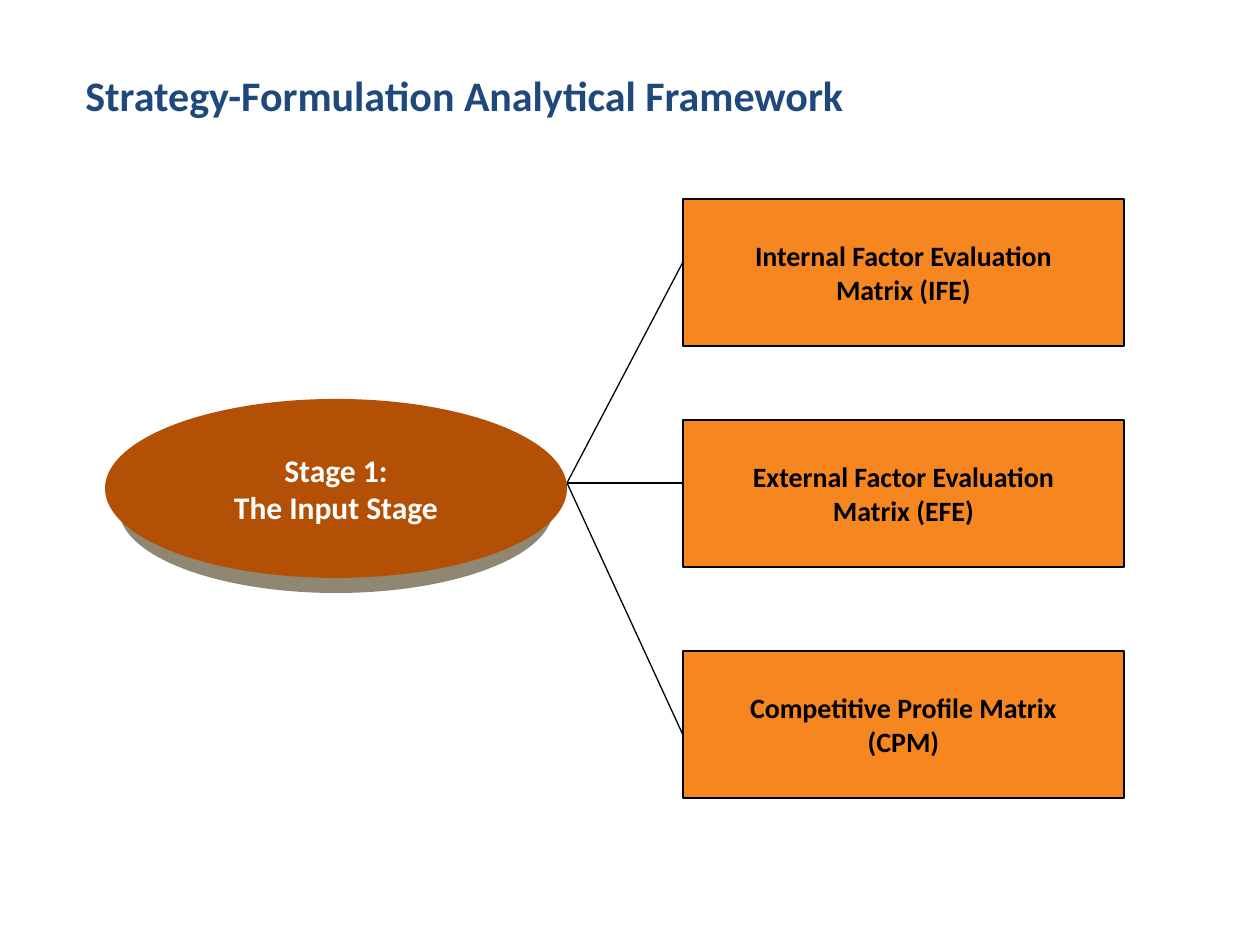
from pptx import Presentation
from pptx.dml.color import RGBColor
from pptx.enum.shapes import MSO_CONNECTOR, MSO_SHAPE
from pptx.enum.text import MSO_ANCHOR, PP_ALIGN
from pptx.oxml.ns import qn
from pptx.util import Pt
from lxml import etree

RECT, OVAL = MSO_SHAPE.RECTANGLE, MSO_SHAPE.OVAL
LINE = MSO_CONNECTOR.STRAIGHT
MID, TOP = MSO_ANCHOR.MIDDLE, MSO_ANCHOR.TOP
LEFT, MIDDLE = PP_ALIGN.LEFT, PP_ALIGN.CENTER
NAVY = RGBColor(0x1F, 0x49, 0x7D)
ORANGE = RGBColor(0xF6, 0x86, 0x1F)
RUST = RGBColor(0xB4, 0x50, 0x05)
TAUPE = RGBColor(0x8F, 0x87, 0x72)
BLACK = RGBColor(0, 0, 0)
WHITE = RGBColor(0xFF, 0xFF, 0xFF)


def px(*nums):
    return [round(num * 914400 / 126) for num in nums]


def write(frame, text, size=16, color=BLACK, align=MIDDLE, anchor=MID, wrap=False, face="Calibri"):
    frame.word_wrap = wrap
    frame.vertical_anchor = anchor
    para = frame.paragraphs[0]
    para.text = text
    para.alignment = align
    for run in para.runs:
        font = run.font
        font.name, font.size, font.bold = face, Pt(size), True
        font.color.rgb = color


class Deck:
    """Holds the line style and the current slide."""

    def __init__(self, slide, width=0.75, ink=BLACK):
        self.slide, self.width, self.ink = slide, width, ink

    def title(self, text, *area):
        box = self.slide.shapes.add_textbox(*px(*area))
        write(box.text_frame, text, size=24, color=NAVY, align=LEFT, anchor=TOP, wrap=True)

    def shape(self, kind, fill, *area, edge=False, text="", **style):
        item = self.slide.shapes.add_shape(kind, *px(*area))
        item.shadow.inherit = False
        item.fill.solid()
        item.fill.fore_color.rgb = fill
        if edge:
            self.stroke(item.line)
        else:
            item.line.fill.background()
        if text:
            write(item.text_frame, text, **style)

    def link(self, *ends):
        item = self.slide.shapes.add_connector(LINE, *px(*ends))
        self.stroke(item.line)
        etree.SubElement(item.element.spPr, qn("a:effectLst"))

    def stroke(self, line):
        line.color.rgb = self.ink
        line.width = Pt(self.width)


def main():
    show = Presentation()
    show.slide_width, show.slide_height = px(1260, 945)
    deck = Deck(show.slides.add_slide(show.slide_layouts[6]))
    deck.title("Strategy-Formulation Analytical Framework", 73, 63, 1187, 64)
    tools = [
        ("Internal Factor Evaluation\nMatrix (IFE)", 199, 262),
        ("External Factor Evaluation\nMatrix (EFE)", 420, 483),
        ("Competitive Profile Matrix\n(CPM)", 651, 735),
    ]
    for text, top, _ in tools:
        deck.shape(RECT, ORANGE, 683, top, 441, 147, edge=True, text=text)
    deck.shape(OVAL, TAUPE, 119, 425, 434, 168)
    deck.shape(OVAL, RUST, 105, 399, 462, 179,
               text="Stage 1:\nThe Input Stage", size=18, color=WHITE)
    for _, _, end in tools:
        deck.link(567, 483, 683, end)
    show.save("out.pptx")


if __name__ == "__main__":
    main()
